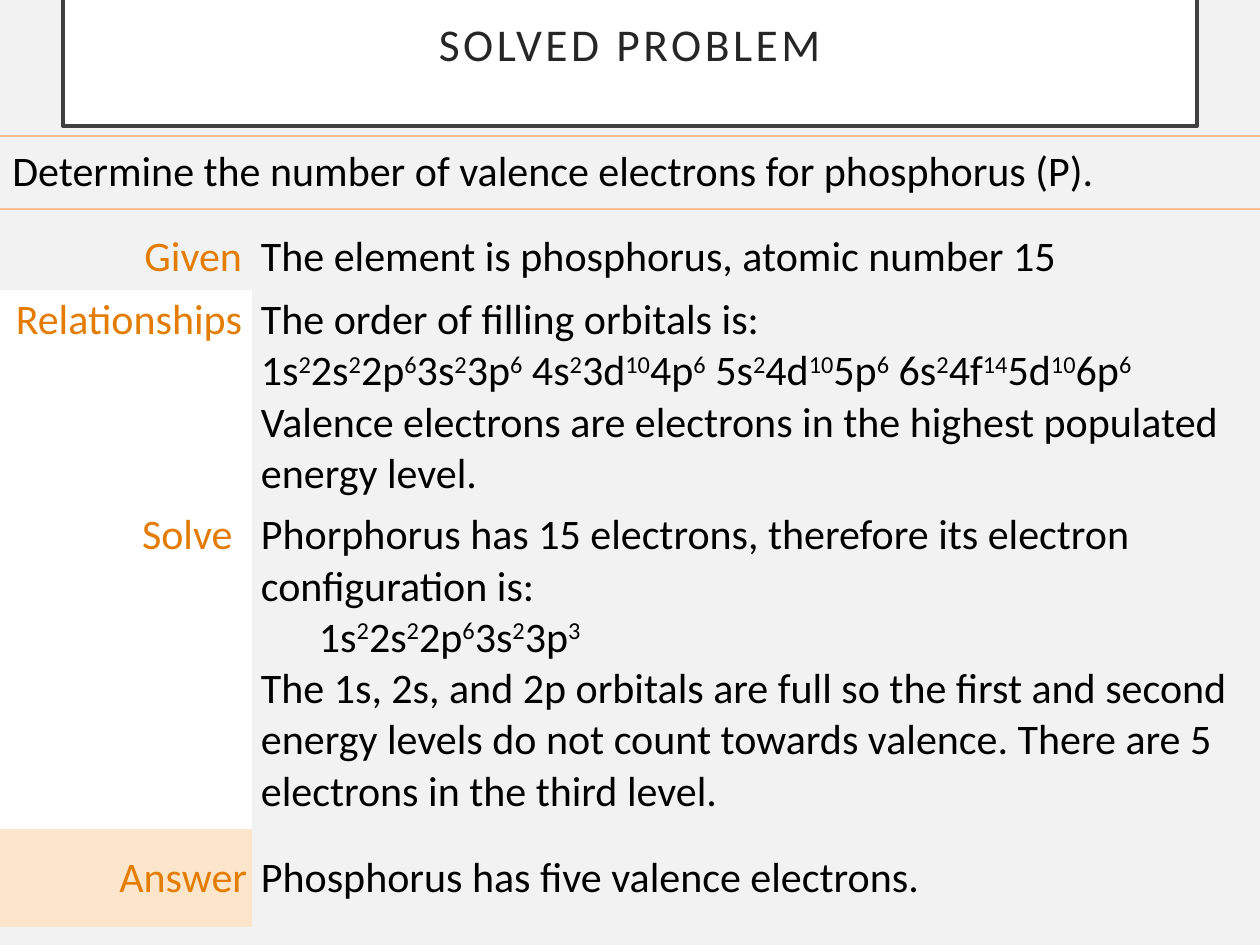
from lxml.etree import SubElement
from pptx import Presentation
from pptx.dml.color import RGBColor
from pptx.enum.text import MSO_ANCHOR as Anchor, MSO_AUTO_SIZE as Fit, PP_ALIGN as Align
from pptx.oxml.ns import qn
from pptx.util import Cm, Pt

BACK = RGBColor(0xF2, 0xF2, 0xF2)
WHITE = RGBColor(0xFF, 0xFF, 0xFF)
BLACK = RGBColor(0x00, 0x00, 0x00)
FRAME = RGBColor(0x40, 0x40, 0x40)
DARK = RGBColor(0x26, 0x26, 0x26)
ORANGE = RGBColor(0xE3, 0x7C, 0x00)
PEACH = RGBColor(0xFB, 0xE6, 0xCC)
RULE = RGBColor(0xFE, 0xBE, 0x8F)
FONT = "Calibri"
PLAIN = "{2D5ABB26-0587-4C30-8999-92F81FD0307C}"  # no style, no grid
WIDE = Cm(25.4)

# Every second part between bars is superscript; a leading tab indents a line.
TITLE = "SOLVED PROBLEM"
TASK = "Determine the number of valence electrons for phosphorus (P)."
STEPS = [  # label, lines, label fill, row height in cm, anchor
    ("Given", ["The element is phosphorus, atomic number 15"],
     None, 1.27, Anchor.TOP),
    ("Relationships", [
        "The order of filling orbitals is:",
        "1s|2|2s|2|2p|6|3s|2|3p|6| 4s|2|3d|10|4p|6| 5s|2|4d|10|5p|6"
        "| 6s|2|4f|14|5d|10|6p|6",
        "Valence electrons are electrons in the highest populated energy level.",
    ], WHITE, 4.34, Anchor.TOP),
    ("Solve ", [
        "Phorphorus has 15 electrons, therefore its electron configuration is:",
        "\t1s|2|2s|2|2p|6|3s|2|3p|3",
        "The 1s, 2s, and 2p orbitals are full so the first and second energy "
        "levels do not count towards valence. There are 5 electrons in the "
        "third level.",
    ], WHITE, 6.53, Anchor.TOP),
    ("Answer", ["Phosphorus has five valence electrons."],
     PEACH, 1.98, Anchor.MIDDLE),
]


def add_run(para, text, color, size=24):
    run = para.add_run()
    run.text = text
    run.font.name = FONT
    run.font.size = Pt(size)
    run.font.color.rgb = color
    return run.font


def fill_cell(cell, lines, color, fill=None, align=Align.LEFT,
              anchor=Anchor.TOP, left=0.2, right=0.2, edge=0.1):
    cell.margin_left, cell.margin_right = Cm(left), Cm(right)
    cell.margin_top = cell.margin_bottom = Cm(edge)
    cell.vertical_anchor = anchor
    if fill is None:
        cell.fill.background()
    else:
        cell.fill.solid()
        cell.fill.fore_color.rgb = fill
    frame = cell.text_frame
    for i, line in enumerate(lines):
        para = frame.add_paragraph() if i else frame.paragraphs[0]
        para.alignment = align
        if line.startswith("\t"):
            para._p.get_or_add_pPr().set("marL", str(Cm(1.17)))
        for j, part in enumerate(line.strip("\t").split("|")):
            font = add_run(para, part, color)
            if j % 2:
                font._element.set("baseline", "30000")


def add_grid(slide, top, cols, rows):
    """Add an unstyled full-width table; sizes are in cm."""
    shape = slide.shapes.add_table(len(rows), len(cols), 0, Cm(top),
                                   WIDE, Cm(sum(rows)))
    table = shape.table
    table.first_row = table.horz_banding = False
    table._tbl.tblPr.find(qn("a:tableStyleId")).text = PLAIN
    for col, width in zip(table.columns, cols):
        col.width = Cm(width)
    for row, height in zip(table.rows, rows):
        row.height = Cm(height)
    return table


def add_rules(cell):
    """Draw the top and bottom borders; they must precede the cell's fill."""
    props = cell._tc.get_or_add_tcPr()
    for i, tag in enumerate(("a:lnT", "a:lnB")):
        line = SubElement(props, qn(tag), w=str(Pt(1.5)))
        solid = SubElement(line, qn("a:solidFill"))
        SubElement(solid, qn("a:srgbClr"), val=str(RULE))
        props.insert(i, line)


def add_title(slide):
    title = slide.shapes.title
    title.left, title.top = Cm(1.27), Cm(-0.64)
    title.width, title.height = Cm(22.86), Cm(3.18)
    title.fill.solid()
    title.fill.fore_color.rgb = WHITE
    title.line.color.rgb = FRAME
    title.line.width = Pt(2.5)
    frame = title.text_frame
    frame.auto_size = Fit.NONE
    frame.word_wrap = True
    frame.vertical_anchor = Anchor.MIDDLE
    frame.margin_left = frame.margin_right = Cm(0.51)
    frame.margin_top = frame.margin_bottom = Cm(0.51)
    para = frame.paragraphs[0]
    para.alignment = Align.CENTER
    para.line_spacing = 0.9
    add_run(para, TITLE, DARK, 26)._element.set("spc", "200")


def main():
    deck = Presentation()
    deck.slide_width, deck.slide_height = WIDE, Cm(19.05)
    slide = deck.slides.add_slide(deck.slide_layouts[5])
    slide.background.fill.solid()
    slide.background.fill.fore_color.rgb = BACK
    add_title(slide)

    task = add_grid(slide, 2.74, [25.4], [1.48]).cell(0, 0)
    fill_cell(task, [TASK], BLACK, anchor=Anchor.MIDDLE,
              left=0.25, right=0.25, edge=0.13)
    add_rules(task)

    grid = add_grid(slide, 4.57, [5.08, 20.32], [step[3] for step in STEPS])
    for i, (label, lines, fill, _, anchor) in enumerate(STEPS):
        right = 0.1 if anchor == Anchor.MIDDLE else 0.2
        fill_cell(grid.cell(i, 0), [label], ORANGE, fill, Align.RIGHT,
                  anchor, right=right)
        fill_cell(grid.cell(i, 1), lines, BLACK, anchor=anchor, left=0.18)

    deck.save("out.pptx")


if __name__ == "__main__":
    main()
